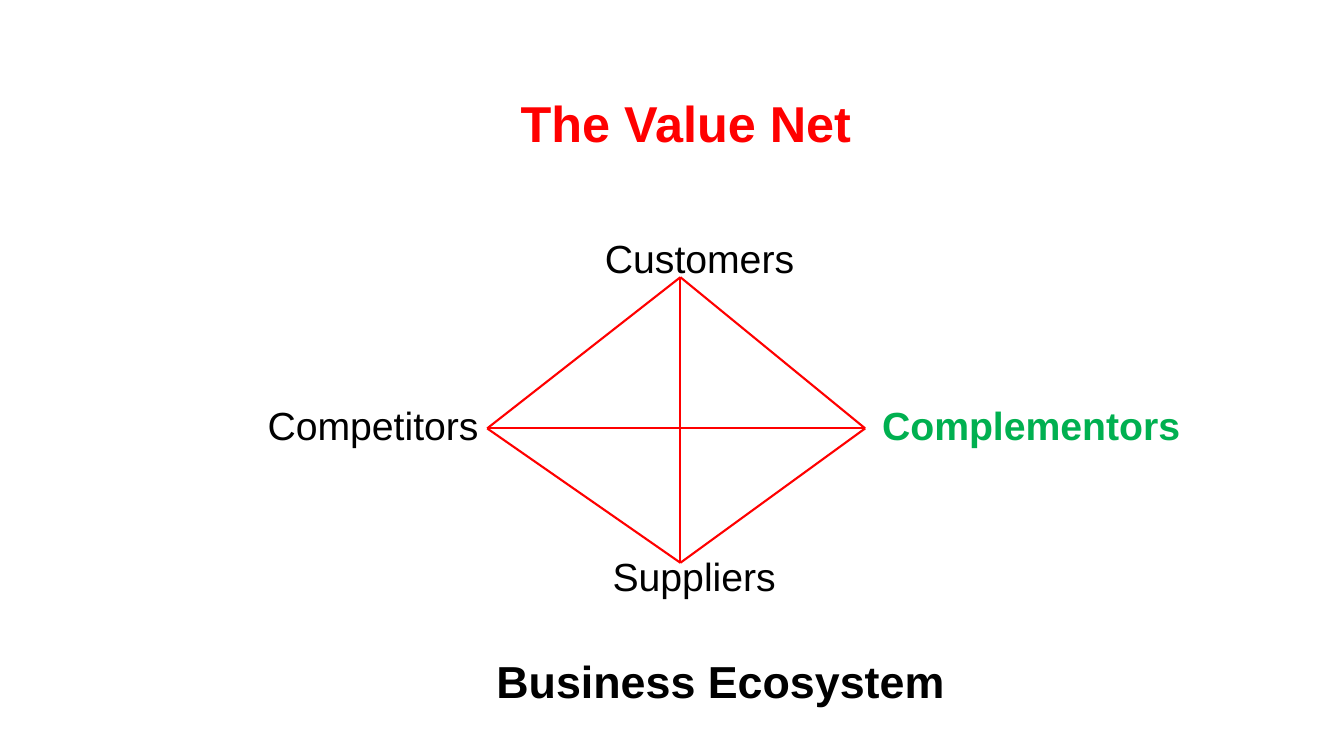
from itertools import combinations

from lxml.etree import SubElement
from pptx import Presentation
from pptx.dml.color import RGBColor
from pptx.enum.shapes import MSO_CONNECTOR
from pptx.enum.text import MSO_ANCHOR, PP_ALIGN
from pptx.oxml.ns import qn
from pptx.util import Pt

RED, GREEN, BLACK = "FF0000", "00B050", "000000"


def colour(hex_string):
    return RGBColor.from_string(hex_string)


def write_text(shape, text, size, hex_string, bold=False, alignment=PP_ALIGN.LEFT):
    text_frame = shape.text_frame
    text_frame.text = text
    text_frame.word_wrap = True
    text_frame.vertical_anchor = MSO_ANCHOR.TOP
    paragraph = text_frame.paragraphs[0]
    paragraph.alignment = alignment
    font = paragraph.runs[0].font
    font.name = "Arial"
    font.size = Pt(size)
    font.bold = bold
    font.color.rgb = colour(hex_string)


def add_label(slide, left, top, width, height, text, size, hex_string, bold=False):
    shape = slide.shapes.add_textbox(Pt(left), Pt(top), Pt(width), Pt(height))
    write_text(shape, text, size, hex_string, bold)


def add_line(slide, start, end):
    connector = slide.shapes.add_connector(
        MSO_CONNECTOR.STRAIGHT, *(Pt(value) for value in start + end))
    connector.line.color.rgb = colour(RED)
    connector.line.width = Pt(1.5)
    SubElement(connector._element.spPr, qn("a:effectLst"))


def place_title(slide, left, top, width, height):
    title = slide.shapes.title
    title.left, title.top = Pt(left), Pt(top)
    title.width, title.height = Pt(width), Pt(height)
    write_text(title, "The Value Net", 36, RED, True, PP_ALIGN.CENTER)


def add_value_net(slide, left, top, width, height):
    """Join the four players, each with every other, and label the corners."""
    apex = left + 138
    middle = top + 108
    right, bottom = left + width, top + height
    corners = [(apex, top), (right, middle), (apex, bottom), (left, middle)]
    for start, end in combinations(corners, 2):
        add_line(slide, start, end)

    labels = [
        ("Customers", apex - 61, top - 34.5, 152, BLACK, False),
        ("Complementors", right + 5, middle - 23, 231, GREEN, True),
        ("Suppliers", apex - 55.5, bottom - 11, 133, BLACK, False),
        ("Competitors", left - 164, middle - 23, 168, BLACK, False),
    ]
    for text, label_left, label_top, label_width, hex_string, bold in labels:
        add_label(slide, label_left, label_top, label_width, 41,
                  text, 28, hex_string, bold)


def main():
    presentation = Presentation()
    presentation.slide_width, presentation.slide_height = Pt(960), Pt(540)
    slide = presentation.slides.add_slide(presentation.slide_layouts[5])
    place_title(slide, 360, 62.5, 260, 51)
    add_value_net(slide, 348, 198, 270, 204)
    add_label(slide, 347.5, 463.5, 340, 46, "Business Ecosystem", 32, BLACK, True)
    presentation.save("out.pptx")


if __name__ == "__main__":
    main()
